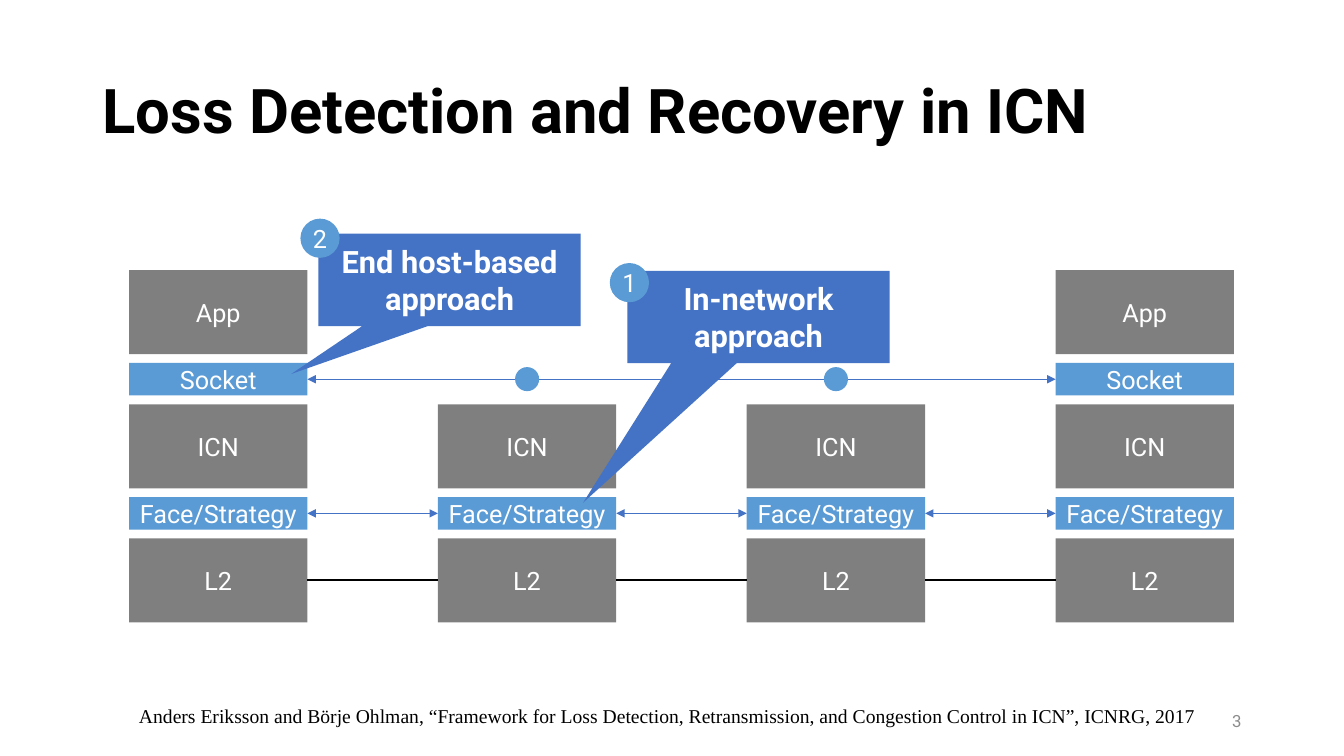
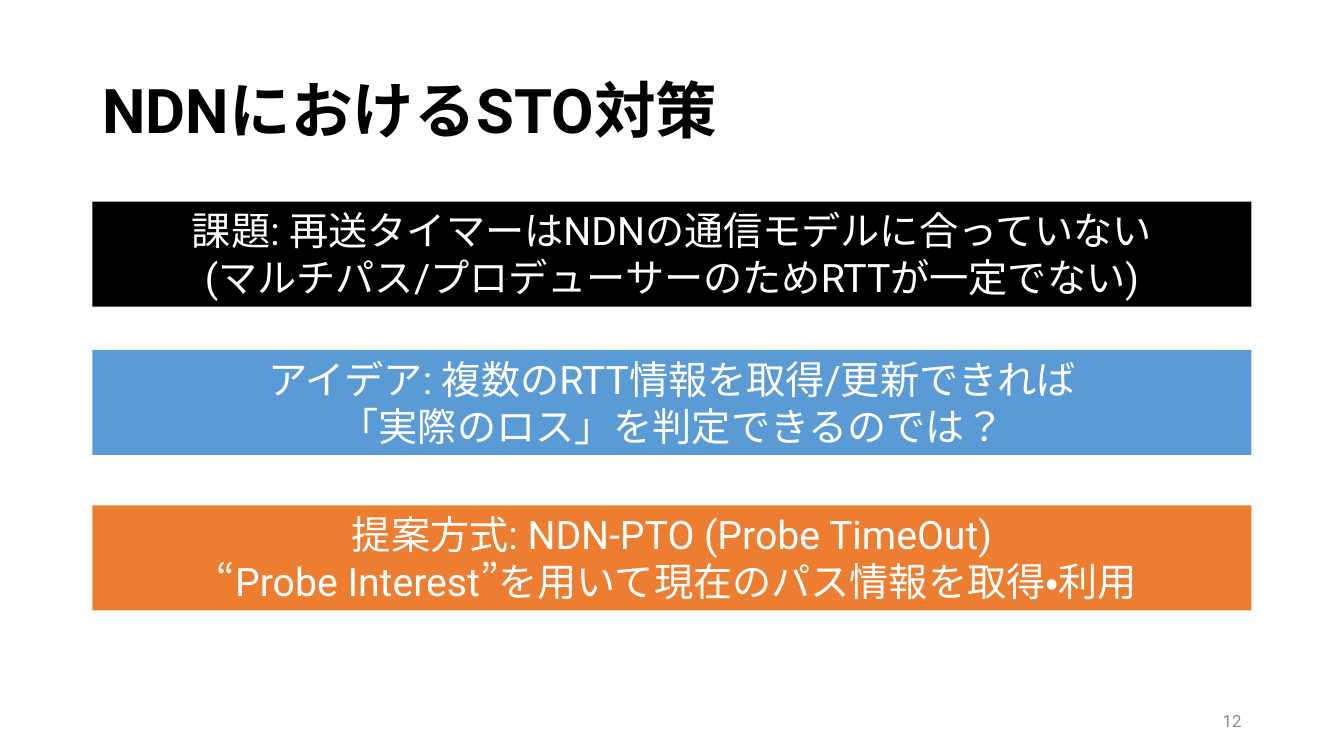
"""Build two slides on loss recovery in information-centric networks."""
from dataclasses import dataclass
from itertools import pairwise
from typing import Any

from lxml.etree import SubElement
from pptx import Presentation
from pptx.dml.color import RGBColor
from pptx.enum.lang import MSO_LANGUAGE_ID as Language
from pptx.enum.shapes import MSO_CONNECTOR as Link, MSO_SHAPE as Kind
from pptx.enum.text import MSO_ANCHOR as Anchor, MSO_AUTO_SIZE as AutoSize, PP_ALIGN as Align
from pptx.oxml.ns import qn
from pptx.shapes.autoshape import Shape
from pptx.slide import Slide
from pptx.util import Pt

BLACK, WHITE, MUTED = "000000", "FFFFFF", "8C8C8C"
SKY, BLUE, ORANGE = "5B9BD5", "4472C4", "ED7D31"
TITLE_ONLY = 5
TOP, LEFT, RIGHT = 0, 1, 3

TITLE = {"name": "Roboto", "size": Pt(44), "bold": True}
NUMBER = {"name": "Roboto", "size": Pt(12)}
LABEL = {"name": "Roboto", "size": Pt(18)}
CALLOUT = {"name": "Roboto", "size": Pt(22), "bold": True}
MESSAGE = {"name": "Roboto", "size": Pt(28), "language_id": Language.JAPANESE}
CITATION = {"name": "Times New Roman", "size": Pt(14)}

COLUMN_LEFT, COLUMN_STEP, COLUMN_WIDTH = 92.2, 220.6, 127.4
STACK_TOP, LAYER_GAP = 193, 6.3
BADGE_SIZE, DOT_SIZE = 28, 17.2


@dataclass(frozen=True)
class Area:
    """A rectangle in points."""
    left: float
    top: float
    width: float
    height: float

    def lengths(self) -> tuple[Pt, Pt, Pt, Pt]:
        """Return the four lengths for python-pptx."""
        return Pt(self.left), Pt(self.top), Pt(self.width), Pt(self.height)


@dataclass(frozen=True)
class Layer:
    """One layer of the protocol stack."""
    name: str
    height: float
    color: str
    opacity: int
    hosts_only: bool = False


@dataclass(frozen=True)
class Approach:
    """A numbered callout with its pointer and badge."""
    number: str
    text: str
    area: Area
    pointer: tuple[float, float]
    badge: tuple[float, float]


@dataclass(frozen=True)
class Band:
    """A full-width message band."""
    top: float
    color: str
    lines: tuple[str, ...]


LAYERS = (
    Layer("App", 60, BLACK, 50, hosts_only=True),
    Layer("Socket", 23.2, SKY, 100, hosts_only=True),
    Layer("ICN", 60, BLACK, 50),
    Layer("Face/Strategy", 23.2, SKY, 100),
    Layer("L2", 60, BLACK, 50),
)
APPROACHES = (
    Approach("2", "End host-based approach", Area(227.5, 167, 187.2, 66),
             (-0.604, 1.018), (214.6, 156.2)),
    Approach("1", "In-network approach", Area(448.2, 193.5, 187.2, 66),
             (-0.669, 2.009), (435.6, 187.9)),
)
BANDS = (
    Band(144, BLACK, ("課題: 再送タイマーはNDNの通信モデルに合っていない",
                      "(マルチパス/プロデューサーのためRTTが一定でない)")),
    Band(250, SKY, ("アイデア: 複数のRTT情報を取得/更新できれば",
                    "「実際のロス」を判定できるのでは？")),
    Band(361, ORANGE, ("提案方式: NDN-PTO (Probe TimeOut)",
                       " “Probe Interest”を用いて現在のパス情報を取得・利用")),
)


def rgb(value: str) -> RGBColor:
    """Turn a hex string into a colour."""
    return RGBColor.from_string(value)


def write(box: Shape, lines: tuple[str, ...], style: dict[str, Any], color: str,
          align: Align = Align.CENTER, anchor: Anchor = Anchor.MIDDLE,
          spacing: float = 1.0) -> None:
    """Fill a box with formatted paragraphs."""
    frame = box.text_frame
    settings = {"word_wrap": True, "auto_size": AutoSize.NONE, "vertical_anchor": anchor}
    for key, value in settings.items():
        setattr(frame, key, value)
    for index, line in enumerate(lines):
        para = frame.add_paragraph() if index else frame.paragraphs[0]
        para.alignment, para.line_spacing = align, spacing
        span = para.add_run()
        span.text = line
        for key, value in style.items():
            setattr(span.font, key, value)
        span.font.color.rgb = rgb(color)


def draw_shape(page: Slide, kind: Kind, area: Area, color: str, opacity: int = 100) -> Shape:
    """Draw a flat shape without an outline."""
    box = page.shapes.add_shape(kind, *area.lengths())
    box.shadow.inherit = False
    box.fill.solid()
    box.fill.fore_color.rgb = rgb(color)
    box.line.fill.background()
    box.text_frame.margin_left = box.text_frame.margin_right = 0
    if opacity < 100:
        tint = next(box.element.spPr.iter(qn("a:srgbClr")))
        SubElement(tint, qn("a:alpha"), val=str(opacity * 1000))
    return box


def draw_text(page: Slide, area: Area, text: str, style: dict[str, Any], color: str,
              align: Align, anchor: Anchor) -> None:
    """Draw a plain line of text."""
    box = page.shapes.add_textbox(*area.lengths())
    write(box, (text,), style, color, align, anchor)


def join(page: Slide, start: Shape, end: Shape, color: str, width: float,
         arrows: bool) -> None:
    """Connect the facing sides of two boxes."""
    link = page.shapes.add_connector(Link.STRAIGHT, 0, 0, 0, 0)
    link.begin_connect(start, RIGHT)
    link.end_connect(end, LEFT)
    link.line.color.rgb = rgb(color)
    link.line.width = Pt(width)
    if arrows:
        for tag in ("a:headEnd", "a:tailEnd"):
            SubElement(link.line._get_or_add_ln(), qn(tag), type="triangle")
    SubElement(link.element.spPr, qn("a:effectLst"))


def add_page(deck: Any, title: str, number: str) -> Slide:
    """Add a page with the shared title and page number."""
    page = deck.slides.add_slide(deck.slide_layouts[TITLE_ONLY])
    heading = page.shapes.title
    area = Area(66, 28.8, 828, 104.4)
    for key, value in zip(("left", "top", "width", "height"), area.lengths()):
        setattr(heading, key, value)
    write(heading, (title,), TITLE, BLACK, Align.LEFT, spacing=0.9)
    draw_text(page, Area(678, 500.5, 216, 28.8), number, NUMBER, MUTED,
              Align.RIGHT, Anchor.MIDDLE)
    return page


def draw_stacks(page: Slide) -> dict[str, list[Shape]]:
    """Draw four protocol stacks and return their boxes by layer."""
    rows: dict[str, list[Shape]] = {}
    top = STACK_TOP
    for layer in LAYERS:
        rows[layer.name] = []
        for column in (0, 3) if layer.hosts_only else range(4):
            area = Area(COLUMN_LEFT + column * COLUMN_STEP, top, COLUMN_WIDTH, layer.height)
            box = draw_shape(page, Kind.RECTANGLE, area, layer.color, layer.opacity)
            write(box, (layer.name,), LABEL, WHITE)
            rows[layer.name].append(box)
        top += layer.height + LAYER_GAP
    return rows


def draw_approach(page: Slide, approach: Approach) -> None:
    """Draw a callout and its number badge."""
    box = draw_shape(page, Kind.RECTANGULAR_CALLOUT, approach.area, BLUE)
    for index, value in enumerate(approach.pointer):
        box.adjustments[index] = value
    write(box, (approach.text,), CALLOUT, WHITE)
    badge = draw_shape(page, Kind.OVAL, Area(*approach.badge, BADGE_SIZE, BADGE_SIZE), SKY)
    write(badge, (approach.number,), LABEL, WHITE)


def build_stack_page(deck: Any) -> None:
    """Build the page comparing the two recovery approaches."""
    page = add_page(deck, "Loss Detection and Recovery in ICN", "3")
    rows = draw_stacks(page)
    for name, color, width, arrows in (("L2", BLACK, 1.5, False),
                                       ("Face/Strategy", BLUE, 0.5, True),
                                       ("Socket", BLUE, 0.5, True)):
        for start, end in pairwise(rows[name]):
            join(page, start, end, color, width, arrows)
    for column in (1, 2):
        center = COLUMN_LEFT + column * COLUMN_STEP + COLUMN_WIDTH / 2
        draw_shape(page, Kind.OVAL,
                   Area(center - DOT_SIZE / 2, 262.2, DOT_SIZE, DOT_SIZE), SKY)
    for approach in APPROACHES:
        draw_approach(page, approach)
    draw_text(page, Area(92.2, 499, 796.3, 24.5),
              "Anders Eriksson and Börje Ohlman, “Framework for Loss Detection, "
              "Retransmission, and Congestion Control in ICN”, ICNRG, 2017",
              CITATION, BLACK, Align.LEFT, Anchor.TOP)


def build_message_page(deck: Any) -> None:
    """Build the page with problem, idea and proposal."""
    page = add_page(deck, "NDNにおけるSTO対策", "12")
    for band in BANDS:
        box = draw_shape(page, Kind.RECTANGLE, Area(66, band.top, 828, 75), band.color)
        write(box, band.lines, MESSAGE, WHITE, anchor=Anchor.TOP)


def main() -> None:
    """Create and save the deck."""
    deck = Presentation()
    deck.slide_width, deck.slide_height = Pt(960), Pt(540)
    build_stack_page(deck)
    build_message_page(deck)
    deck.save("out.pptx")


if __name__ == "__main__":
    main()
